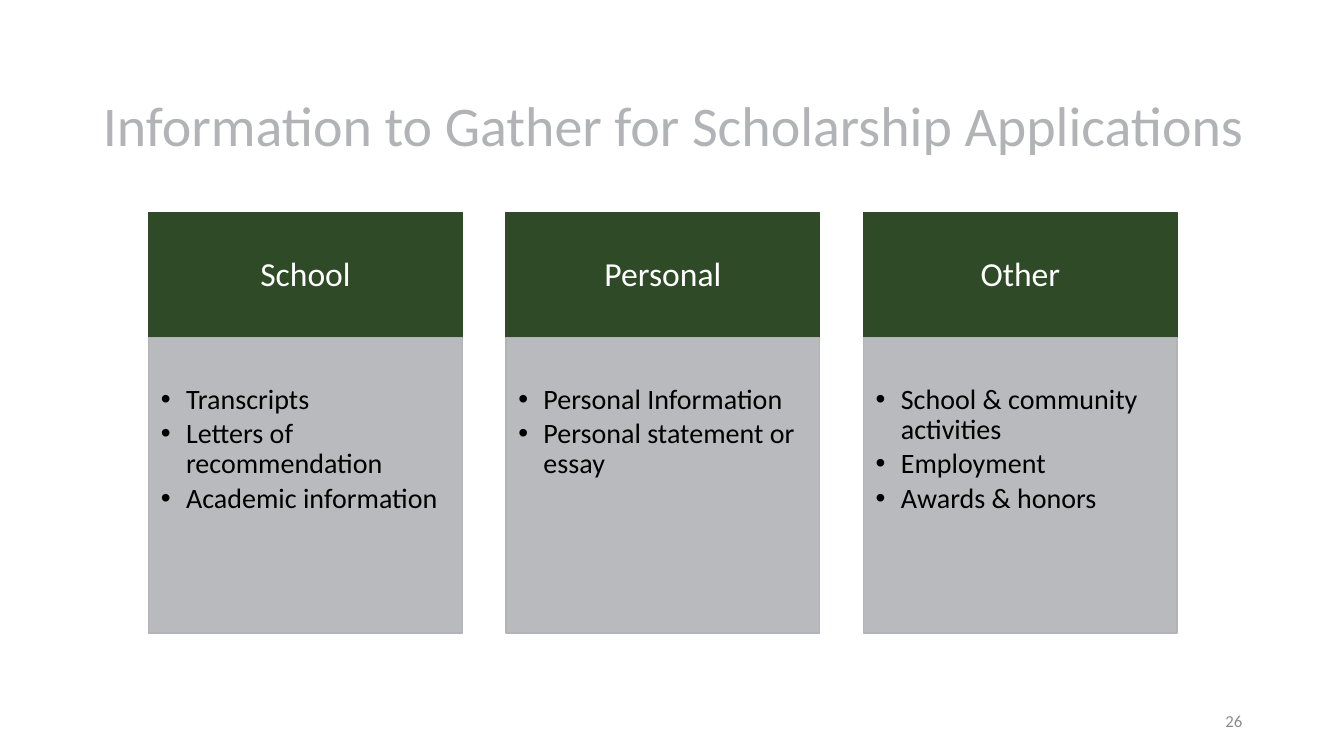
"""Build the slide on information to gather for scholarship applications."""
import pptx
import pptx.util
import pptx.oxml.ns
import pptx.dml.color
import pptx.enum.shapes
import pptx.enum.text
from lxml import etree

Inches, Pt = pptx.util.Inches, pptx.util.Pt
qn = pptx.oxml.ns.qn
ALIGN = pptx.enum.text.PP_ALIGN
ANCHOR = pptx.enum.text.MSO_ANCHOR
COLORS = {"title": "B2B3B6", "header": "2F4A26", "body": "B2B3B6",
          "light": "FFFFFF", "dark": "000000", "number": "8C8C8C"}


def rgb(name):
    return pptx.dml.color.RGBColor.from_string(COLORS[name])


def write(sp, text, size, color, align=ALIGN.LEFT, anchor=ANCHOR.MIDDLE,
          insets=(0.1, 0.05, 0.1, 0.05), spacing=0.9, after=0, bullet=False):
    tf = sp.text_frame
    tf.word_wrap = True
    tf.auto_size = pptx.enum.text.MSO_AUTO_SIZE.NONE
    tf.vertical_anchor = anchor
    tf.margin_left, tf.margin_top, tf.margin_right, tf.margin_bottom = map(Inches, insets)
    tf.text = text
    for p in tf.paragraphs:
        p.alignment, p.line_spacing, p.space_after = align, spacing, Pt(after)
        font = p.runs[0].font
        font.name, font.size, font.color.rgb = "Calibri", Pt(size), rgb(color)
        if bullet:
            pPr = p._p.get_or_add_pPr()
            pPr.set("marL", str(Inches(0.25)))
            pPr.set("indent", str(-Inches(0.25)))
            etree.SubElement(pPr, qn("a:buFont"), typeface="Arial")
            etree.SubElement(pPr, qn("a:buChar"), char="•")


prs = pptx.Presentation()
prs.slide_width, prs.slide_height = Inches(13.33), Inches(7.5)
s = prs.slides.add_slide(prs.slide_layouts[5])

title = s.shapes.title
title.left, title.top, title.width, title.height = map(Inches, (0.92, 0.77, 11.68, 0.85))
write(title, "Information to Gather for Scholarship Applications", 40, "title",
      anchor=ANCHOR.BOTTOM)

columns = {
    "School": ["Transcripts", "Letters of recommendation", "Academic information"],
    "Personal": ["Personal Information", "Personal statement or essay"],
    "Other": ["School & community activities", "Employment", "Awards & honors"],
}
header_format = dict(size=24, color="light", align=ALIGN.CENTER,
                     insets=(0.19, 0.11, 0.19, 0.11), after=8.4)
body_format = dict(size=20, color="dark", anchor=ANCHOR.TOP,
                   insets=(0.12, 0.47, 0.16, 0.17), after=3, bullet=True)

for i, (heading, items) in enumerate(columns.items()):
    left = 1.475 + 3.545 * i
    for top, height, fill, text, style in (
            (2.11, 1.24, "header", heading, header_format),
            (3.35, 2.93, "body", "\n".join(items), body_format)):
        sp = s.shapes.add_shape(pptx.enum.shapes.MSO_SHAPE.RECTANGLE, Inches(left),
                                Inches(top), Inches(3.11), Inches(height))
        sp.shadow.inherit = False
        sp.fill.solid()
        sp.fill.fore_color.rgb = sp.line.color.rgb = rgb(fill)
        sp.line.width = Pt(1)
        if fill == "body":
            srgb = sp._element.spPr.find(qn("a:solidFill")).find(qn("a:srgbClr"))
            etree.SubElement(srgb, qn("a:alpha"), val="90000")
        write(sp, text, **style)

number = s.shapes.add_textbox(Inches(9.42), Inches(6.95), Inches(3), Inches(0.4))
write(number, "26", 12, "number", align=ALIGN.RIGHT, spacing=1.0)

prs.save("out.pptx")
